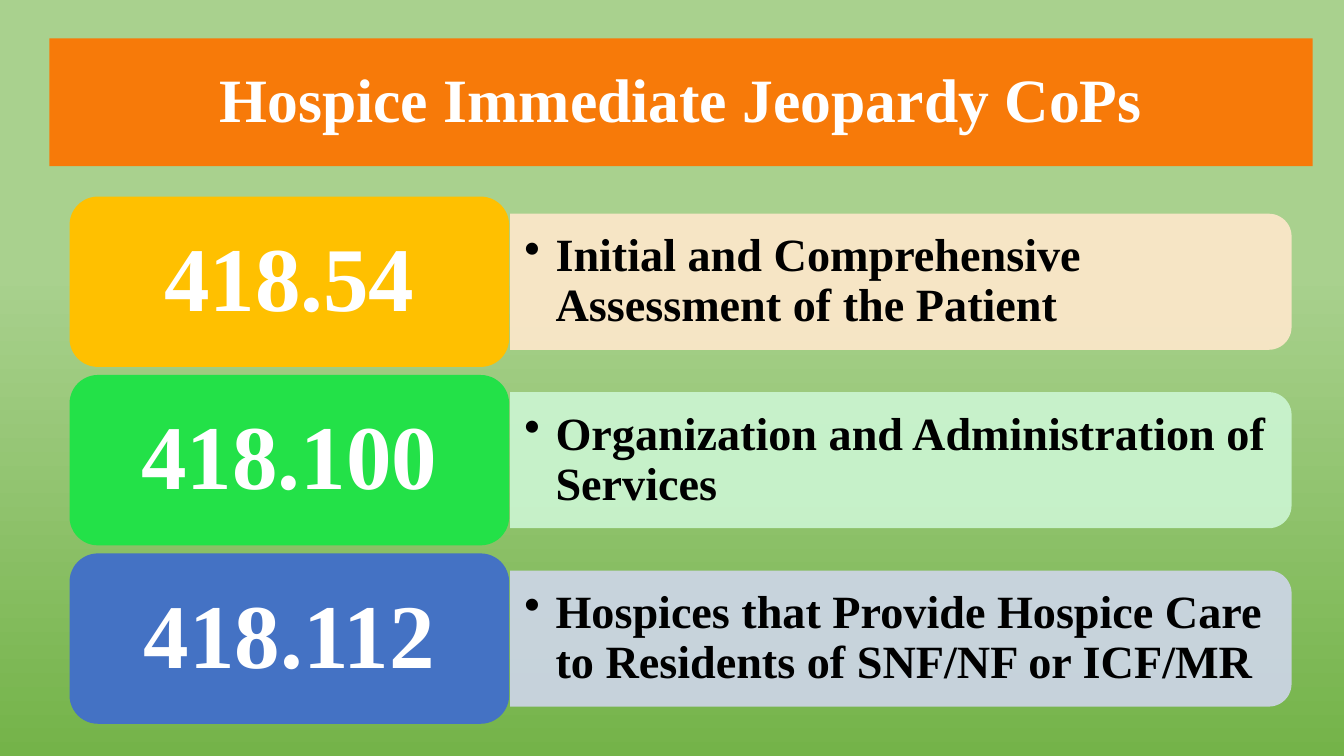
from lxml import etree
from pptx import Presentation
from pptx.dml.color import RGBColor
from pptx.enum.shapes import MSO_SHAPE as Shape
from pptx.enum.text import MSO_ANCHOR as Anchor, PP_ALIGN as Align
from pptx.oxml.ns import qn
from pptx.util import Inches, Pt

TITLE = "Hospice Immediate Jeopardy CoPs"
CONDITIONS = [
    ("418.54", "Initial and Comprehensive Assessment of the Patient", "amber", "cream"),
    ("418.100", "Organization and Administration of Services", "green", "mint"),
    ("418.112", "Hospices that Provide Hospice Care to Residents of SNF/NF or ICF/MR",
     "blue", "mist"),
]
COLORS = {
    "orange": "F77A09", "amber": "FFC000", "green": "23E148", "blue": "4472C4",
    "cream": "FFE8CC", "mint": "CCF6D3", "mist": "CFD6EA",
    "meadow": "74B349", "leaf": "A9D18E", "white": "FFFFFF", "black": "000000",
}
FONT = "Times New Roman"
BAR_OPACITY = 90

CARD_LEFT, CARD_TOP, CARD_WIDTH, CARD_HEIGHT = 0.69, 1.95, 4.36, 1.69
ROW_PITCH = 1.77
BAR_LEFT, BAR_WIDTH, BAR_HEIGHT = 5.06, 7.75, 1.35
LABEL_WIDTH, LABEL_HEIGHT = 7.69, 1.22
BULLET_INDENT = 0.31


def color(name):
    return RGBColor.from_string(COLORS[name])


def add_block(page, kind, left, top, width, height, fill):
    block = page.shapes.add_shape(
        kind, Inches(left), Inches(top), Inches(width), Inches(height))
    block.shadow.inherit = False
    block.fill.solid()
    block.fill.fore_color.rgb = color(fill)
    block.line.fill.background()
    return block


def write(box, text, size, ink, align, inset_x, inset_y):
    frame = box.text_frame
    frame_format = {
        "word_wrap": True, "vertical_anchor": Anchor.MIDDLE,
        "margin_left": Inches(inset_x), "margin_right": Inches(inset_x),
        "margin_top": Inches(inset_y), "margin_bottom": Inches(inset_y),
    }
    for name, value in frame_format.items():
        setattr(frame, name, value)
    para = frame.paragraphs[0]
    para.alignment = align
    para.line_spacing = 0.9
    span = para.add_run()
    span.text = text
    for name, value in {"name": FONT, "size": Pt(size), "bold": True}.items():
        setattr(span.font, name, value)
    span.font.color.rgb = color(ink)
    return para


def add_bullet(para):
    properties = para._p.get_or_add_pPr()
    properties.set("marL", str(Inches(BULLET_INDENT)))
    properties.set("indent", str(-Inches(BULLET_INDENT)))
    etree.SubElement(properties, qn("a:buChar")).set("char", "•")


def add_bar(page, middle, fill):
    """Draw the bar upright and turn it, so its round corners face right."""
    center = BAR_LEFT + BAR_WIDTH / 2
    bar = add_block(page, Shape.ROUND_2_SAME_RECTANGLE, center - BAR_HEIGHT / 2,
                    middle - BAR_WIDTH / 2, BAR_HEIGHT, BAR_WIDTH, fill)
    bar.rotation = 90
    tint = bar.fill._xPr.find(qn("a:solidFill"))[0]
    etree.SubElement(tint, qn("a:alpha")).set("val", str(BAR_OPACITY * 1000))


def add_condition(page, row, number, description, card_fill, bar_fill):
    top = CARD_TOP + row * ROW_PITCH
    middle = top + CARD_HEIGHT / 2
    add_bar(page, middle, bar_fill)
    label = page.shapes.add_textbox(
        Inches(BAR_LEFT), Inches(middle - LABEL_HEIGHT / 2),
        Inches(LABEL_WIDTH), Inches(LABEL_HEIGHT))
    add_bullet(write(label, description, 33, "black", Align.LEFT, 0.14, 0.07))
    card = add_block(page, Shape.ROUNDED_RECTANGLE, CARD_LEFT, top,
                     CARD_WIDTH, CARD_HEIGHT, card_fill)
    write(card, number, 65, "white", Align.CENTER, 0.27, 0.14)


def paint_background(page):
    fill = page.background.fill
    fill.gradient()
    fill.gradient_angle = 90
    for stop, (position, name) in zip(fill.gradient_stops, [(0, "meadow"), (0.64, "leaf")]):
        stop.position = position
        stop.color.rgb = color(name)


def main():
    deck = Presentation()
    deck.slide_width, deck.slide_height = Inches(13.33), Inches(7.5)
    page = deck.slides.add_slide(deck.slide_layouts[6])
    paint_background(page)
    banner = add_block(page, Shape.RECTANGLE, 0.49, 0.38, 12.53, 1.27, "orange")
    write(banner, TITLE, 44, "white", Align.CENTER, 0.1, 0.05)
    for row, condition in enumerate(CONDITIONS):
        add_condition(page, row, *condition)
    deck.save("out.pptx")


if __name__ == "__main__":
    main()
